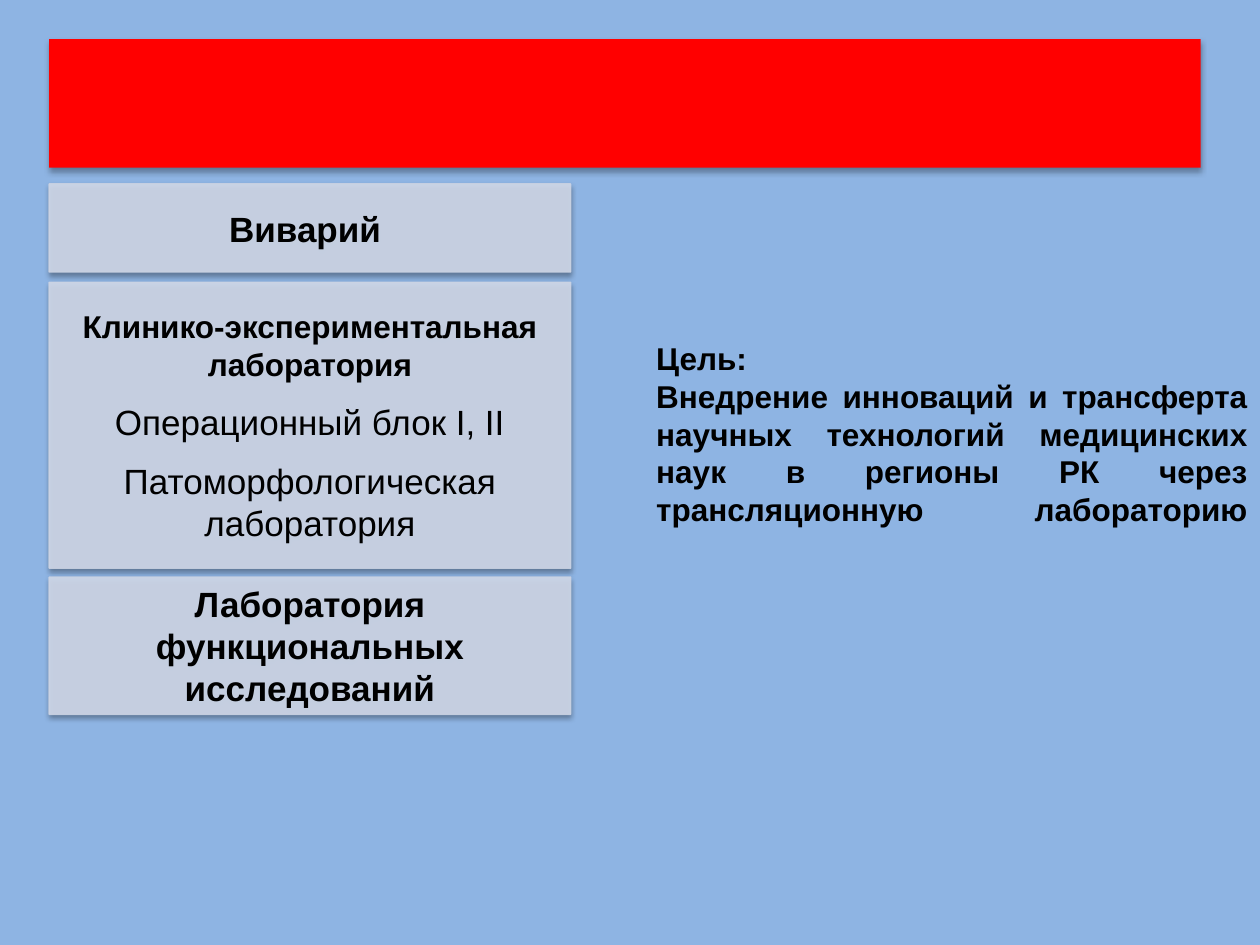
from lxml.etree import SubElement
from pptx import Presentation
from pptx.dml.color import RGBColor
from pptx.enum.shapes import MSO_SHAPE
from pptx.enum.text import MSO_ANCHOR, PP_ALIGN
from pptx.oxml.ns import qn
from pptx.util import Inches, Pt

COLORS = {
    "background": "8EB4E3",
    "banner": "FF0000",
    "card": "D0D8E8",
    "border": "CBD3E3",
    "text": "000000",
    "shadow": "000000",
}
FONT = "Arial"
CARD_OPACITY = 90

GOAL = (
    "Цель:\vВнедрение инноваций и трансферта научных технологий "
    "медицинских наук в регионы РК через трансляционную лабораторию\v"
)
LABORATORIES = [
    (1.46, 0.7, 10, [("Виварий ", 20, True)]),
    (2.24, 2.27, 10, [
        ("Клинико-экспериментальная лаборатория", 18, True),
        ("Операционный блок I, II", 20, False),
        ("Патоморфологическая лаборатория", 20, False),
    ]),
    (4.58, 1.09, 0, [("Лаборатория функциональных исследований", 20, True)]),
]


def color(name):
    return RGBColor.from_string(COLORS[name])


def set_opacity(fill, percent):
    for tint in fill._xPr.find(qn("a:solidFill")):
        SubElement(tint, qn("a:alpha"), val=str(percent * 1000))


def add_shadow(shape, opacity, blur, distance):
    shape.shadow.inherit = False
    effects = shape._element.spPr.find(qn("a:effectLst"))
    outer = SubElement(
        effects, qn("a:outerShdw"), blurRad=str(Pt(blur)),
        dist=str(Pt(distance)), dir="5400000", rotWithShape="0",
    )
    tint = SubElement(outer, qn("a:srgbClr"), val=COLORS["shadow"])
    SubElement(tint, qn("a:alpha"), val=str(opacity * 1000))


def add_panel(slide, box, fill_name):
    panel = slide.shapes.add_shape(MSO_SHAPE.RECTANGLE, *map(Inches, box))
    panel.fill.solid()
    panel.fill.fore_color.rgb = color(fill_name)
    return panel


def style_paragraph(paragraph, size, bold, alignment, space_after=0):
    paragraph.alignment = alignment
    paragraph.space_after = Pt(space_after)
    paragraph.font.name = FONT
    paragraph.font.size = Pt(size)
    paragraph.font.bold = bold
    paragraph.font.color.rgb = color("text")


def add_banner(slide, box):
    banner = add_panel(slide, box, "banner")
    banner.line.fill.background()
    add_shadow(banner, 32, 3.5, 2.2)


def add_goal(slide, box):
    goal = slide.shapes.add_textbox(*map(Inches, box)).text_frame
    goal.word_wrap = True
    goal.vertical_anchor = MSO_ANCHOR.MIDDLE
    goal.text = GOAL
    style_paragraph(goal.paragraphs[0], 18, True, PP_ALIGN.JUSTIFY)


def add_laboratory(slide, box, space_after, entries):
    card = add_panel(slide, box, "card")
    set_opacity(card.fill, CARD_OPACITY)
    card.line.color.rgb = color("border")
    card.line.width = Pt(0.75)
    set_opacity(card.line.fill, CARD_OPACITY)
    add_shadow(card, 35, 3.1, 1.8)

    frame = card.text_frame
    frame.word_wrap = True
    frame.vertical_anchor = MSO_ANCHOR.MIDDLE
    frame.text = "\n".join(wording for wording, _, _ in entries)
    for paragraph, (_, size, bold) in zip(frame.paragraphs, entries):
        style_paragraph(paragraph, size, bold, PP_ALIGN.CENTER, space_after)


def add_laboratories(slide, left, width):
    for top, height, space_after, entries in LABORATORIES:
        add_laboratory(slide, (left, top, width, height), space_after, entries)


def main():
    presentation = Presentation()
    presentation.slide_width = Inches(10)
    presentation.slide_height = Inches(7.5)
    slide = presentation.slides.add_slide(presentation.slide_layouts[6])
    slide.background.fill.solid()
    slide.background.fill.fore_color.rgb = color("background")

    add_goal(slide, (5.11, 2.42, 4.89, 2.34))
    add_banner(slide, (0.39, 0.31, 9.14, 1.02))
    add_laboratories(slide, 0.39, 4.14)
    presentation.save("out.pptx")


if __name__ == "__main__":
    main()
